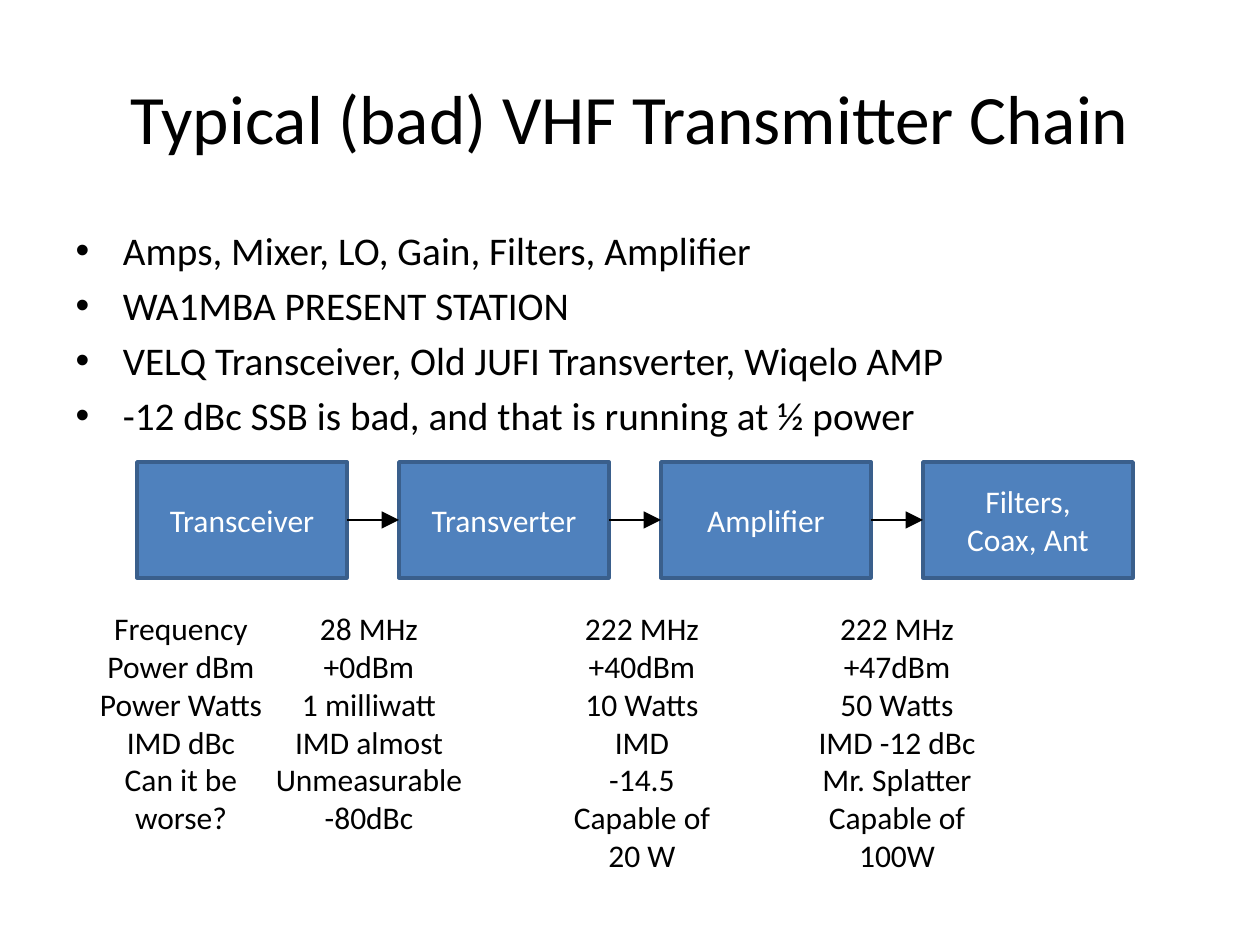
from dataclasses import dataclass

from pptx import Presentation
from pptx import util as u
from pptx.dml.color import RGBColor
from pptx.enum import shapes, text
from pptx.oxml import parse_xml
from pptx.oxml.ns import nsdecls, qn

TITLE = "Typical (bad) VHF Transmitter Chain"
BULLETS = [
    "Amps, Mixer, LO, Gain, Filters, Amplifier",
    "WA1MBA PRESENT STATION",
    "VELQ Transceiver, Old JUFI Transverter, Wiqelo AMP",
    "-12 dBc SSB is bad, and that is running at ½ power",
]
STAGES = [["Transceiver"], ["Transverter"], ["Amplifier"], ["Filters,", "Coax, Ant"]]
# Left, width and lines of each column of readings
READINGS = [
    (86, 190, ["Frequency", "Power dBm", "Power Watts", "IMD dBc", "Can it be\nworse?"]),
    (262, 214, ["28 MHz", "+0dBm", "1 milliwatt", "IMD almost", "Unmeasurable", "-80dBc"]),
    (560, 164, ["222 MHz", "+40dBm", "10 Watts", "IMD", "-14.5", "Capable of", "20 W"]),
    (805, 184, ["222 MHz", "+47dBm", "50 Watts", "IMD -12 dBc", "Mr. Splatter",
                "Capable of", "100W"]),
]

SLIDE_SIZE = (1260, 945)
TITLE_AREA = (63, 38, 1134, 158)
BODY_AREA = (63, 220, 1134, 190)
STAGE_LEFT, STAGE_TOP, STAGE_WIDTH, STAGE_HEIGHT = 137, 462, 210, 116
STAGE_PITCH = 262
READING_TOP, READING_HEIGHT = 603, 280


@dataclass(frozen=True)
class Theme:
    font: str = "Calibri"
    ink: str = "000000"
    light: str = "FFFFFF"
    fill: str = "4F81BD"
    edge: str = "3A5F8C"
    title: float = 39.6
    body: float = 22.4
    label: float = 18


THEME = Theme()


def px(*lengths):
    return [round(length * u.Inches(1) / 126) for length in lengths]


def color(code):
    return RGBColor.from_string(code)


def write(frame, lines, size, ink=THEME.ink, align=None, anchor=None, wrap=True,
          fit=text.MSO_AUTO_SIZE.NONE):
    frame.word_wrap = wrap
    frame.auto_size = fit
    if anchor is not None:
        frame.vertical_anchor = anchor
    for index, line in enumerate(lines):
        para = frame.add_paragraph() if index else frame.paragraphs[0]
        para.text = line
        if align is not None:
            para.alignment = align
        for span in para.runs:
            span.font.name = THEME.font
            span.font.size = u.Pt(size)
            span.font.color.rgb = color(ink)


def place(shape, area):
    shape.left, shape.top, shape.width, shape.height = px(*area)


def add_stage(page, index, lines):
    left = STAGE_LEFT + index * STAGE_PITCH
    box = page.shapes.add_shape(shapes.MSO_SHAPE.RECTANGLE,
                                *px(left, STAGE_TOP, STAGE_WIDTH, STAGE_HEIGHT))
    box.shadow.inherit = False
    box.fill.solid()
    box.fill.fore_color.rgb = color(THEME.fill)
    box.line.color.rgb = color(THEME.edge)
    box.line.width = u.Pt(2)
    write(box.text_frame, lines, THEME.label, ink=THEME.light,
          align=text.PP_ALIGN.CENTER, anchor=text.MSO_ANCHOR.MIDDLE)
    return box


def add_arrow(page, source, target):
    """Join the right side of source to the left side of target."""
    arrow = page.shapes.add_connector(shapes.MSO_CONNECTOR.STRAIGHT, 0, 0, 0, 0)
    arrow.begin_connect(source, 3)
    arrow.end_connect(target, 1)
    arrow.line.color.rgb = color(THEME.ink)
    arrow.line.width = u.Pt(0.75)
    properties = arrow.element.find(qn("p:spPr"))
    properties.find(qn("a:ln")).append(
        parse_xml(f'<a:tailEnd {nsdecls("a")} type="triangle" w="lg" len="lg"/>'))
    properties.append(parse_xml(f'<a:effectLst {nsdecls("a")}/>'))


def main():
    deck = Presentation()
    deck.slide_width, deck.slide_height = px(*SLIDE_SIZE)
    page = deck.slides.add_slide(deck.slide_layouts[1])

    title, body = page.placeholders
    place(title, TITLE_AREA)
    write(title.text_frame, [TITLE], THEME.title,
          align=text.PP_ALIGN.CENTER, anchor=text.MSO_ANCHOR.MIDDLE)
    place(body, BODY_AREA)
    write(body.text_frame, BULLETS, THEME.body)

    boxes = [add_stage(page, index, lines) for index, lines in enumerate(STAGES)]
    for source, target in zip(boxes, boxes[1:]):
        add_arrow(page, source, target)

    for left, width, lines in READINGS:
        column = page.shapes.add_textbox(*px(left, READING_TOP, width, READING_HEIGHT))
        write(column.text_frame, lines, THEME.label, align=text.PP_ALIGN.CENTER,
              wrap=False, fit=text.MSO_AUTO_SIZE.SHAPE_TO_FIT_TEXT)

    deck.save("out.pptx")


if __name__ == "__main__":
    main()
